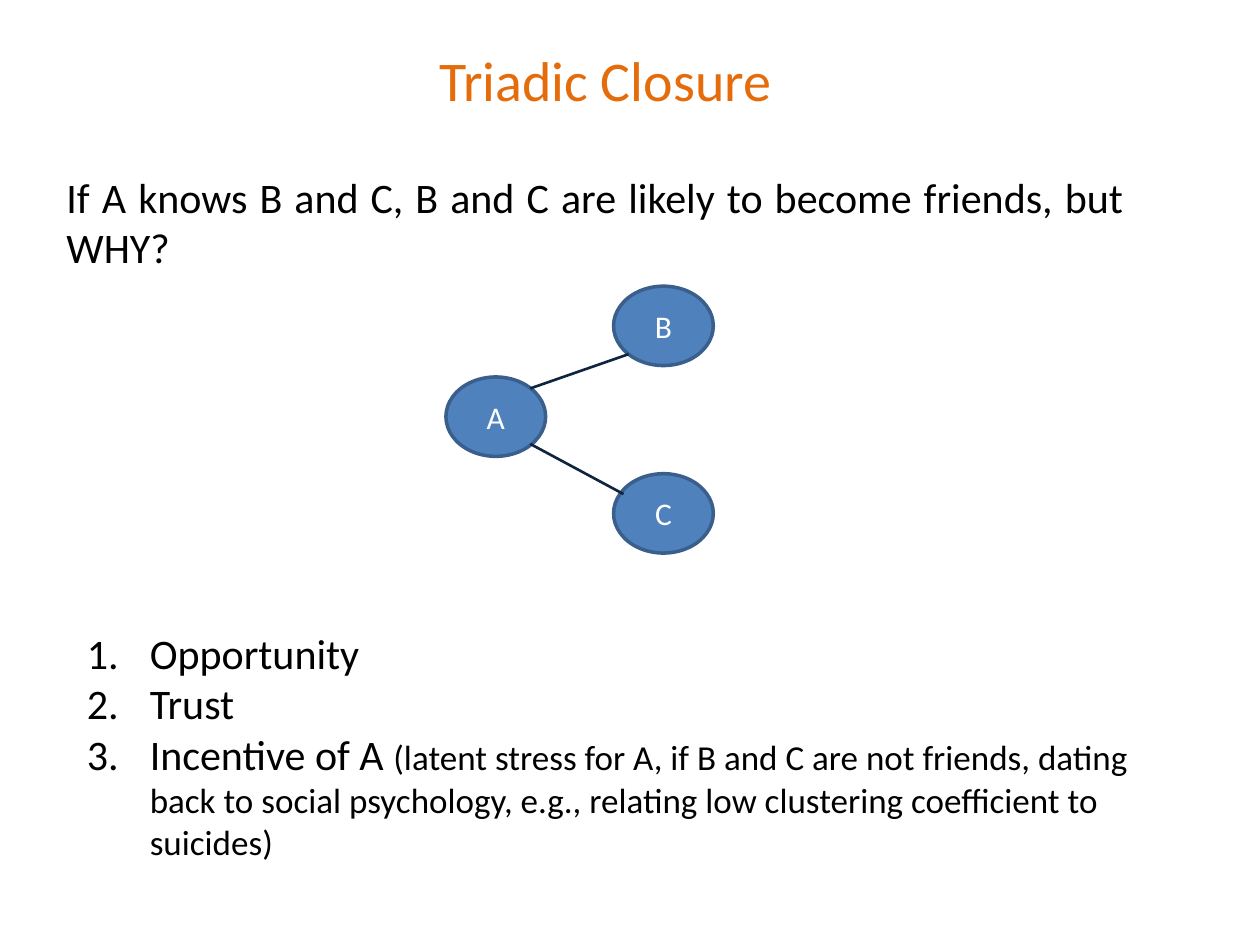
from dataclasses import dataclass

from lxml import etree
from pptx import Presentation
from pptx.dml.color import RGBColor
from pptx.enum.shapes import MSO_CONNECTOR, MSO_SHAPE
from pptx.enum.text import MSO_ANCHOR, PP_ALIGN
from pptx.oxml.ns import qn
from pptx.util import Cm, Pt

LEFT, CENTER, JUSTIFY = PP_ALIGN.LEFT, PP_ALIGN.CENTER, PP_ALIGN.JUSTIFY
MIDDLE = MSO_ANCHOR.MIDDLE
ELLIPSE = MSO_SHAPE.OVAL
STRAIGHT = MSO_CONNECTOR.STRAIGHT


@dataclass(frozen=True)
class Theme:
    """Colours, font and type sizes of the deck."""
    font: str = "Calibri"
    title: str = "E46C0A"
    ink: str = "000000"
    node: str = "4F81BD"
    node_line: str = "3A5F8C"
    node_text: str = "FFFFFF"
    edge: str = "0F243E"
    title_size: int = 32
    body_size: int = 24
    note_size: int = 20
    node_size: int = 18


THEME = Theme()


def rgb(value):
    """Return the colour for a hex string."""
    return RGBColor.from_string(value)


def add_text(para, text, size=THEME.body_size, color=THEME.ink, align=LEFT):
    """Append a formatted span to a paragraph."""
    para.alignment = align
    span = para.add_run()
    span.text = text
    span.font.name = THEME.font
    span.font.size = Pt(size)
    span.font.color.rgb = rgb(color)


def add_frame(page, box):
    """Add a wrapping text box and return its text frame."""
    frame = page.shapes.add_textbox(*map(Cm, box)).text_frame
    frame.word_wrap = True
    return frame


def number_paragraph(para):
    """Give a paragraph an automatic number and a hanging indent."""
    props = para._p.get_or_add_pPr()
    props.set("marL", str(Cm(1.27)))
    props.set("indent", str(-Cm(1.27)))
    etree.SubElement(props, qn("a:buFont"), typeface="+mj-lt")
    etree.SubElement(props, qn("a:buAutoNum"), type="arabicPeriod")


def add_heading(page, box, text):
    """Place the centred slide title."""
    para = add_frame(page, box).paragraphs[0]
    add_text(para, text, size=THEME.title_size, color=THEME.title, align=CENTER)


def add_question(page, box, text):
    """Place the justified question."""
    add_text(add_frame(page, box).paragraphs[0], text, align=JUSTIFY)


def add_reasons(page, box, reasons):
    """Place the numbered reasons, each with an optional smaller note."""
    frame = add_frame(page, box)
    for index, (reason, note) in enumerate(reasons):
        para = frame.add_paragraph() if index else frame.paragraphs[0]
        add_text(para, reason)
        if note:
            add_text(para, note, size=THEME.note_size)
        number_paragraph(para)


def add_node(group, box, label):
    """Add one labelled person to the network."""
    node = group.shapes.add_shape(ELLIPSE, *map(Cm, box))
    node.shadow.inherit = False
    node.fill.solid()
    node.fill.fore_color.rgb = rgb(THEME.node)
    node.line.color.rgb = rgb(THEME.node_line)
    node.line.width = Pt(2)
    node.text_frame.vertical_anchor = MIDDLE
    add_text(node.text_frame.paragraphs[0], label, size=THEME.node_size,
             color=THEME.node_text, align=CENTER)


def add_edge(group, ends):
    """Add one straight friendship line to the network."""
    edge = group.shapes.add_connector(STRAIGHT, *map(Cm, ends))
    edge.line.color.rgb = rgb(THEME.edge)
    edge.line.width = Pt(1.5)
    etree.SubElement(edge._element.spPr, qn("a:effectLst"))


def add_network(page, box):
    """Place the open triad: A knows B and C."""
    left, top, width, height = box
    node_width, node_height = 2.01, 1.6
    far = left + width - node_width
    nodes = {"B": (far, top), "A": (left, top + 1.83),
             "C": (far, top + height - node_height)}
    edges = [(1.7, 2.06, 3.68, 1.37), (1.7, 3.18, 3.58, 4.19)]
    group = page.shapes.add_group_shape()
    for label, (x, y) in nodes.items():
        add_node(group, (x, y, node_width, node_height), label)
    for x1, y1, x2, y2 in edges:
        add_edge(group, (left + x1, top + y1, left + x2, top + y2))


def main():
    """Build and save the deck."""
    deck = Presentation()
    deck.slide_width, deck.slide_height = Cm(25.4), Cm(19.05)
    page = deck.slides.add_slide(deck.slide_layouts[6])
    add_heading(page, (3.18, 0.79, 18.06, 1.63), "Triadic Closure")
    add_question(page, (1.09, 3.33, 21.82, 2.31),
                 "If A knows B and C, B and C are likely to become friends, but WHY?")
    add_reasons(page, (1.5, 12.52, 21.64, 5.05), [
        ("Opportunity", ""),
        ("Trust", ""),
        ("Incentive of A ",
         "(latent stress for A, if B and C are not friends, dating back to social "
         "psychology, e.g., relating low clustering coefficient to suicides)"),
    ])
    add_network(page, (8.99, 5.77, 5.39, 5.38))
    deck.save("out.pptx")


if __name__ == "__main__":
    main()
